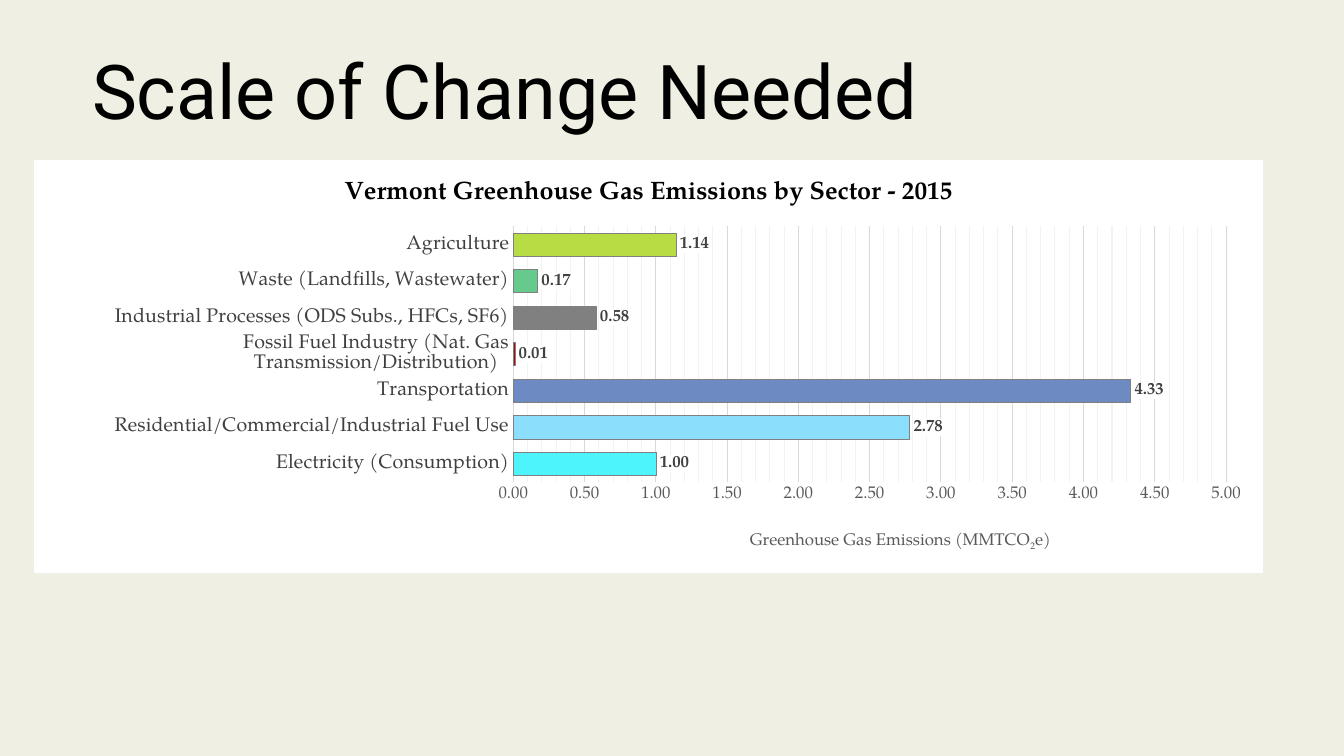
from lxml import etree
from pptx import Presentation, util as u
from pptx.chart.data import CategoryChartData
from pptx.dml.color import RGBColor
from pptx.enum import chart as ch, text
from pptx.oxml import ns

TITLE = "Scale of Change Needed"
CHART_TITLE = "Vermont Greenhouse Gas Emissions by Sector - 2015"
AXIS_TITLE = [("Greenhouse Gas Emissions (MMTCO", False), ("2", True), ("e)", False)]
SECTORS = [
    ("Electricity (Consumption)", 1.00, "4EF4FC"),
    ("Residential/Commercial/Industrial Fuel Use", 2.78, "8CDFFC"),
    ("Transportation", 4.33, "6E8AC2"),
    ("Fossil Fuel Industry (Nat. Gas Transmission/Distribution)", 0.01, "C00000"),
    ("Industrial Processes (ODS Subs., HFCs, SF6)", 0.58, "808080"),
    ("Waste (Landfills, Wastewater)", 0.17, "66CA8C"),
    ("Agriculture", 1.14, "B8DC44"),
]
COLORS = {
    "bg": "EFEFE3", "black": "000000", "white": "FFFFFF", "bar": "00853F",
    "outline": "808080", "label": "404040", "tick": "595959",
    "major": "D9D9D9", "minor": "F2F2F2",
}
SERIF = "TeX Gyre Pagella"
FONTS = {
    "title": ("Roboto", 54, False, "black"),
    "chart": (SERIF, 10, False, "black"),
    "chart_title": (SERIF, 18, True, "black"),
    "category": (SERIF, 14, False, "label"),
    "value": (SERIF, 12, False, "tick"),
    "label": (SERIF, 12, True, "label"),
}
TITLE_BOX = (82, 42, 1181, 95)
CHART_BOX = (34, 160, 1229, 413)
PLOT = {"x": 0.39, "y": 0.16, "w": 0.58, "h": 0.62}
AXIS_TITLE_AT = {"x": 0.58, "y": 0.89}
PX = 914400 / 100.8


def px(*values):
    return [u.Emu(round(v * PX)) for v in values]


def rgb(name):
    return RGBColor.from_string(COLORS.get(name, name))


def set_font(font, kind):
    name, size, bold, color = FONTS[kind]
    for key, value in {"name": name, "size": u.Pt(size), "bold": bold}.items():
        setattr(font, key, value)
    font.color.rgb = rgb(color)


def set_line(fmt, color, width):
    fmt.line.color.rgb = rgb(color)
    fmt.line.width = u.Pt(width)


def set_layout(el, index, fractions, inner=False):
    for old in el.findall(ns.qn("c:layout")):
        el.remove(old)
    layout = etree.Element(ns.qn("c:layout"))
    manual = etree.SubElement(layout, ns.qn("c:manualLayout"))
    items = [("layoutTarget", "inner")] if inner else []
    items += [("xMode", "edge"), ("yMode", "edge"), *fractions.items()]
    for tag, value in items:
        etree.SubElement(manual, ns.qn("c:" + tag)).set("val", str(value))
    el.insert(index, layout)


def add_solid(parent, color):
    fill = etree.SubElement(parent, ns.qn("a:solidFill"))
    etree.SubElement(fill, ns.qn("a:srgbClr")).set("val", COLORS[color])


def fill_after(el, color):
    sp_pr = etree.Element(ns.qn("c:spPr"))
    add_solid(sp_pr, color)
    line = etree.SubElement(sp_pr, ns.qn("a:ln"))
    etree.SubElement(line, ns.qn("a:noFill"))
    el.addnext(sp_pr)


def set_minor_grid(axis, color, width):
    grid = axis._element.find(ns.qn("c:minorGridlines"))
    sp_pr = etree.SubElement(grid, ns.qn("c:spPr"))
    line = etree.SubElement(sp_pr, ns.qn("a:ln"))
    line.set("w", str(u.Pt(width)))
    add_solid(line, color)


def add_title(s):
    sp = s.shapes.title
    sp.left, sp.top, sp.width, sp.height = px(*TITLE_BOX)
    tf = sp.text_frame
    tf.vertical_anchor = text.MSO_ANCHOR.MIDDLE
    p = tf.paragraphs[0]
    p.alignment = text.PP_ALIGN.LEFT
    r = p.add_run()
    r.text = TITLE
    set_font(r.font, "title")


def format_axes(chart):
    cat, val = chart.category_axis, chart.value_axis
    for axis, kind in ((cat, "category"), (val, "value")):
        axis.major_tick_mark = axis.minor_tick_mark = ch.XL_TICK_MARK.NONE
        set_font(axis.tick_labels.font, kind)
    set_line(cat.format, "major", 0.75)
    val.format.line.fill.background()
    scale = {"minimum_scale": 0, "maximum_scale": 5, "major_unit": 0.5, "minor_unit": 0.1,
             "has_major_gridlines": True, "has_minor_gridlines": True}
    for key, value in scale.items():
        setattr(val, key, value)
    set_line(val.major_gridlines.format, "major", 0.75)
    set_minor_grid(val, "minor", 0.75)
    val.tick_labels.number_format = "0.00"
    val.tick_labels.number_format_is_linked = False
    p = val.axis_title.text_frame.paragraphs[0]
    for words, lowered in AXIS_TITLE:
        r = p.add_run()
        r.text = words
        set_font(r.font, "value")
        if lowered:
            r.font._element.set("baseline", "-25000")
    set_layout(val.axis_title._element, 1, AXIS_TITLE_AT)


def format_bars(plot):
    plot.gap_width = 58
    plot.vary_by_categories = False
    series = plot.series[0]
    series.format.fill.solid()
    series.format.fill.fore_color.rgb = rgb("bar")
    set_line(series.format, "outline", 0.25)
    for i, (_, _, color) in enumerate(SECTORS):
        fmt = series.points[i].format
        fmt.fill.solid()
        fmt.fill.fore_color.rgb = rgb(color)
        set_line(fmt, "outline", 0.25)
    labels = series.data_labels
    settings = {"show_value": True, "number_format": "0.00", "number_format_is_linked": False,
                "position": ch.XL_LABEL_POSITION.OUTSIDE_END}
    for key, value in settings.items():
        setattr(labels, key, value)
    set_font(labels.font, "label")
    fill_after(labels._element.find(ns.qn("c:numFmt")), "white")


def add_emissions_chart(s):
    data = CategoryChartData(number_format="0.00")
    data.categories = [name for name, _, _ in SECTORS]
    data.add_series("Series 1", [value for _, value, _ in SECTORS])
    chart = s.shapes.add_chart(ch.XL_CHART_TYPE.BAR_CLUSTERED, *px(*CHART_BOX), data).chart
    set_font(chart.font, "chart")
    chart.has_legend = False
    r = chart.chart_title.text_frame.paragraphs[0].add_run()
    r.text = CHART_TITLE
    set_font(r.font, "chart_title")
    format_axes(chart)
    format_bars(chart.plots[0])
    root = chart._chartSpace.find(ns.qn("c:chart"))
    fill_after(root, "white")
    set_layout(root.find(ns.qn("c:plotArea")), 0, PLOT, inner=True)


def main():
    prs = Presentation()
    prs.slide_width, prs.slide_height = px(1344, 756)
    s = prs.slides.add_slide(prs.slide_layouts[5])
    s.background.fill.solid()
    s.background.fill.fore_color.rgb = rgb("bg")
    add_emissions_chart(s)
    add_title(s)
    prs.save("out.pptx")


if __name__ == "__main__":
    main()
